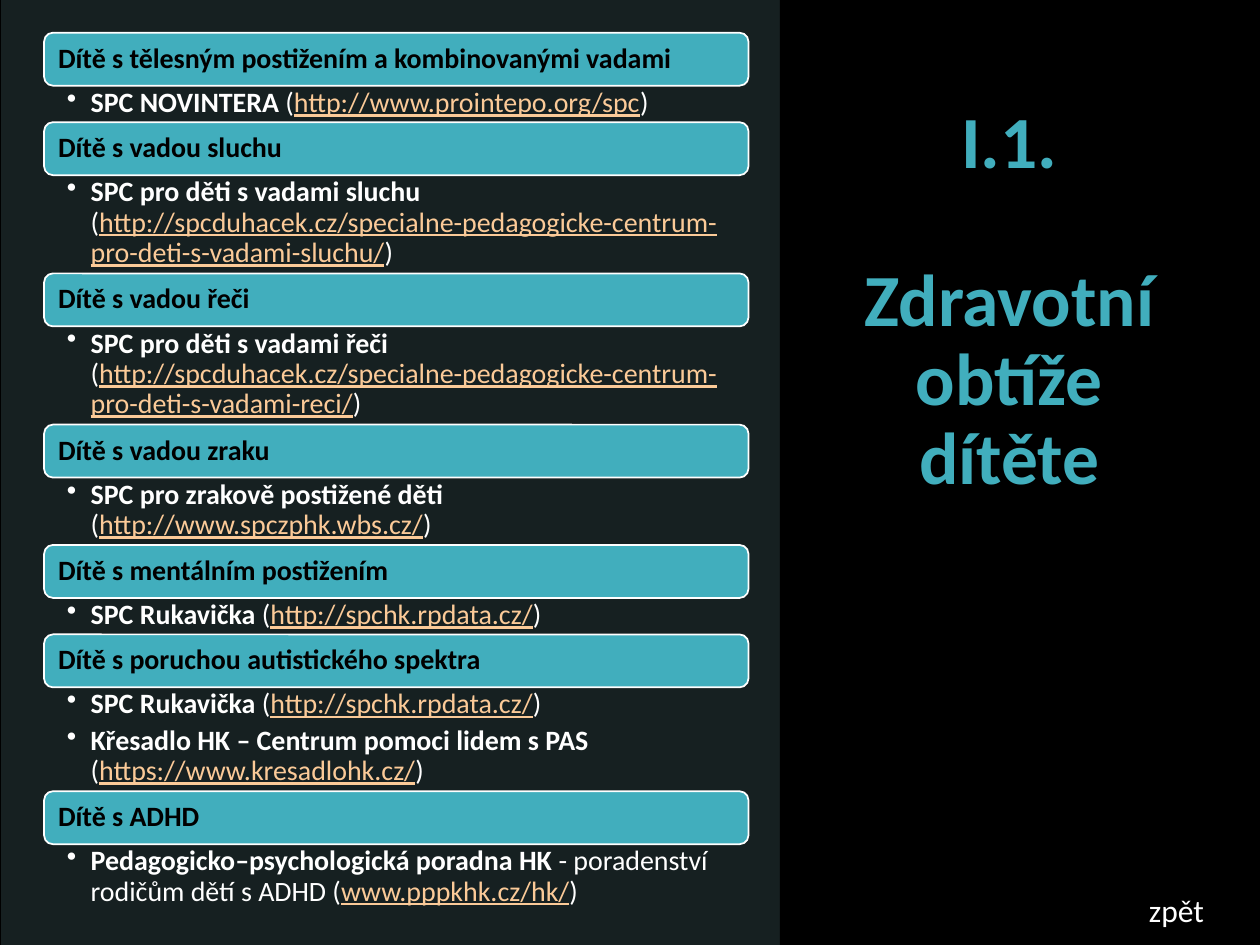
from lxml import etree
from pptx import Presentation
from pptx.dml.color import RGBColor
from pptx.enum.shapes import MSO_SHAPE
from pptx.enum.text import MSO_ANCHOR, PP_ALIGN
from pptx.oxml.ns import qn
from pptx.util import Inches, Pt

RECTANGLE, ROUNDED = MSO_SHAPE.RECTANGLE, MSO_SHAPE.ROUNDED_RECTANGLE
TOP, MIDDLE = MSO_ANCHOR.TOP, MSO_ANCHOR.MIDDLE
LEFT, CENTER = PP_ALIGN.LEFT, PP_ALIGN.CENTER

BLACK = RGBColor(0x00, 0x00, 0x00)
WHITE = RGBColor(0xFF, 0xFF, 0xFF)
TEAL = RGBColor(0x41, 0xAE, 0xBD)
PALE_TEAL = RGBColor(0x94, 0xD7, 0xE4)
LINK = RGBColor(0xFB, 0xCA, 0x98)

FONT = "Calibri"
COLUMNS, ROWS = 100, 75
LIST_LEFT, LIST_TOP, LIST_WIDTH = 3.5, 2.6, 55.9
HEADING_ROWS, LINE_ROWS, ENTRY_GAP = 4.2, 2.45, 0.45

# Heading, then entries: centre, text before the link, link, lines taken
TOPICS = [
    ("Dítě s tělesným postižením a kombinovanými vadami",
     [("SPC NOVINTERA ", "(", "http://www.prointepo.org/spc", 1)]),
    ("Dítě s vadou sluchu",
     [("SPC pro děti s vadami sluchu ", "(",
       "http://spcduhacek.cz/specialne-pedagogicke-centrum-pro-deti-s-vadami-sluchu/", 3)]),
    ("Dítě s vadou řeči",
     [("SPC pro děti s vadami řeči ", "(",
       "http://spcduhacek.cz/specialne-pedagogicke-centrum-pro-deti-s-vadami-reci/", 3)]),
    ("Dítě s vadou zraku",
     [("SPC pro zrakově postižené děti ", "(", "http://www.spczphk.wbs.cz/", 2)]),
    ("Dítě s mentálním postižením",
     [("SPC Rukavička ", "(", "http://spchk.rpdata.cz/", 1)]),
    ("Dítě s poruchou autistického spektra",
     [("SPC Rukavička ", "(", "http://spchk.rpdata.cz/", 1),
      ("Křesadlo HK – Centrum pomoci lidem s PAS ", "(", "https://www.kresadlohk.cz/", 2)]),
    ("Dítě s ADHD",
     [("Pedagogicko–psychologická poradna HK ", "- poradenství rodičům dětí s ADHD (",
       "www.pppkhk.cz/hk/", 2)]),
]


def add_run(paragraph, text, size=16, color=WHITE, bold=False, underline=False):
    run = paragraph.add_run()
    run.text = text
    font = run.font
    font.name, font.size, font.bold = FONT, Pt(size), bold
    font.underline = underline
    font.color.rgb = color


class SlideBuilder:
    """Places styled elements on one slide, measured in grid columns and rows."""

    def __init__(self, presentation):
        self.column = presentation.slide_width / COLUMNS
        self.row = presentation.slide_height / ROWS
        self.slide = presentation.slides.add_slide(presentation.slide_layouts[6])
        background = self.slide.background.fill
        background.solid()
        background.fore_color.rgb = BLACK

    def place(self, left, top, width, height):
        return (round(left * self.column), round(top * self.row),
                round(width * self.column), round(height * self.row))

    def frame(self, shape, insets, anchor=TOP):
        """Set insets (left, top, right, bottom, in inches) and anchor."""
        frame = shape.text_frame
        frame.word_wrap = True
        frame.vertical_anchor = anchor
        (frame.margin_left, frame.margin_top,
         frame.margin_right, frame.margin_bottom) = map(Inches, insets)
        return frame

    def text_box(self, area, insets=(0.1, 0.05, 0.1, 0.05)):
        return self.frame(self.slide.shapes.add_textbox(*self.place(*area)), insets)

    def panel(self, area, color, kind=RECTANGLE, outline=None, opacity=None):
        panel = self.slide.shapes.add_shape(kind, *self.place(*area))
        panel.shadow.inherit = False
        panel.fill.solid()
        panel.fill.fore_color.rgb = color
        if opacity is not None:
            tint = panel.fill._xPr.find(".//" + qn("a:srgbClr"))
            etree.SubElement(tint, qn("a:alpha"), val=str(opacity * 1000))
        if outline is None:
            panel.line.fill.background()
        else:
            panel.line.color.rgb = outline
            panel.line.width = Pt(1)
        return panel

    def heading(self, area, text):
        bar = self.panel(area, TEAL, kind=ROUNDED, outline=WHITE)
        paragraph = self.frame(bar, (0.09, 0.07, 0.09, 0.07), MIDDLE).paragraphs[0]
        paragraph.alignment = LEFT
        paragraph.line_spacing = 0.9
        add_run(paragraph, text, color=BLACK, bold=True)

    def entries(self, area, entries):
        frame = self.text_box(area, (0.18, 0.02, 0.12, 0.02))
        for index, (centre, lead, link, _) in enumerate(entries):
            paragraph = frame.add_paragraph() if index else frame.paragraphs[0]
            paragraph.level = 1
            properties = paragraph._p.get_or_add_pPr()
            properties.set("marL", str(Inches(0.19)))
            properties.set("indent", str(Inches(-0.19)))
            etree.SubElement(properties, qn("a:buChar"), char="•")
            paragraph.line_spacing = 0.9
            paragraph.space_after = Pt(3.5)
            add_run(paragraph, centre, bold=True)
            add_run(paragraph, lead)
            add_run(paragraph, link, color=LINK, underline=True)
            add_run(paragraph, ")")

    def title(self, area, number, text):
        frame = self.text_box(area, (0.1, 0.2, 0.1, 0.05))
        for paragraph, part in ((frame.paragraphs[0], number),
                                (frame.add_paragraph(), text)):
            paragraph.alignment = CENTER
            paragraph.line_spacing = 0.9
            add_run(paragraph, part, size=42, color=TEAL, bold=True)
        frame.paragraphs[0].space_after = Pt(45)


def main():
    presentation = Presentation()
    presentation.slide_width, presentation.slide_height = Inches(10), Inches(7.5)
    builder = SlideBuilder(presentation)

    builder.panel((0.1, 0, 61.8, ROWS), PALE_TEAL, opacity=15)
    builder.panel((61.9, 0, 38.1, ROWS), BLACK)
    builder.title((66.1, 6.3, 28, 61.6), "I.1.", "Zdravotní obtíže dítěte")

    top = LIST_TOP
    for heading, entries in TOPICS:
        builder.heading((LIST_LEFT, top, LIST_WIDTH, HEADING_ROWS), heading)
        top += HEADING_ROWS
        height = sum(entry[-1] * LINE_ROWS + ENTRY_GAP for entry in entries)
        builder.entries((LIST_LEFT, top, LIST_WIDTH, height), entries)
        top += height

    back = builder.text_box((90.2, 70.2, 7.9, 4)).paragraphs[0]
    add_run(back, "zpět", size=18)
    presentation.save("out.pptx")


if __name__ == "__main__":
    main()
